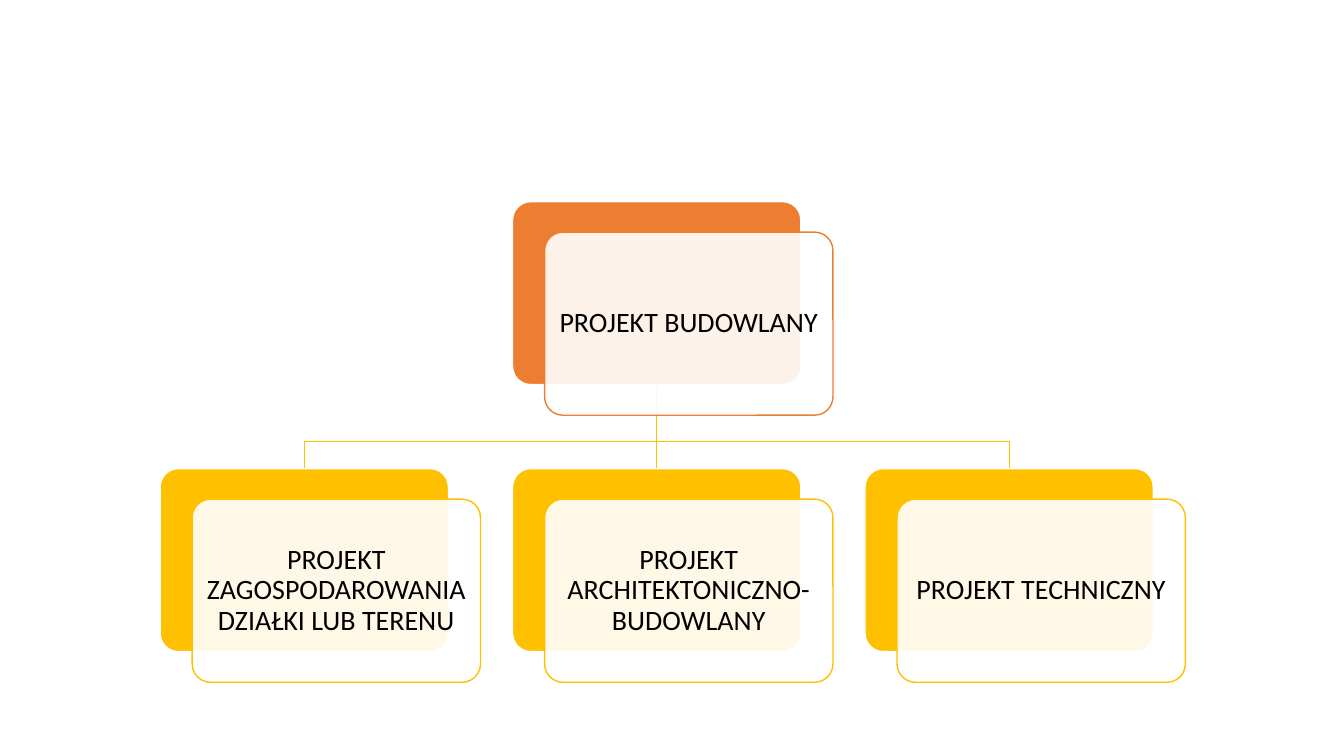
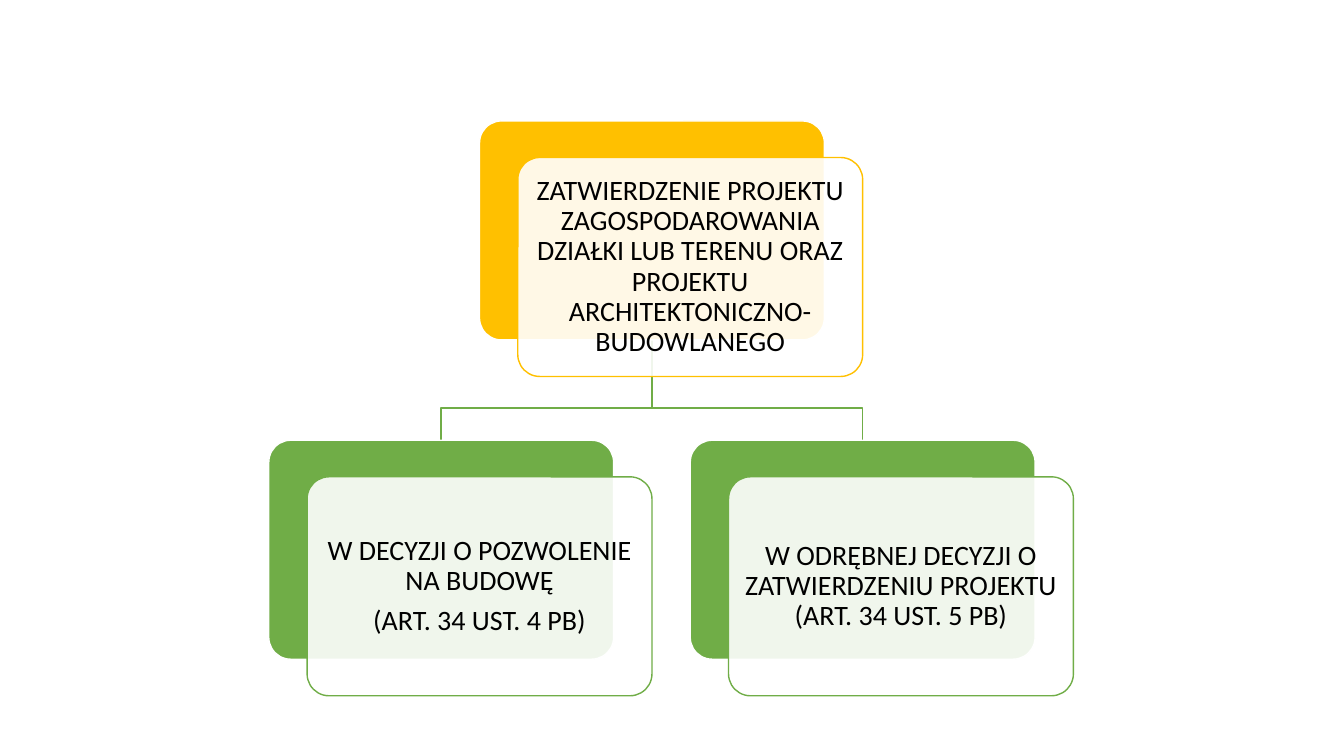
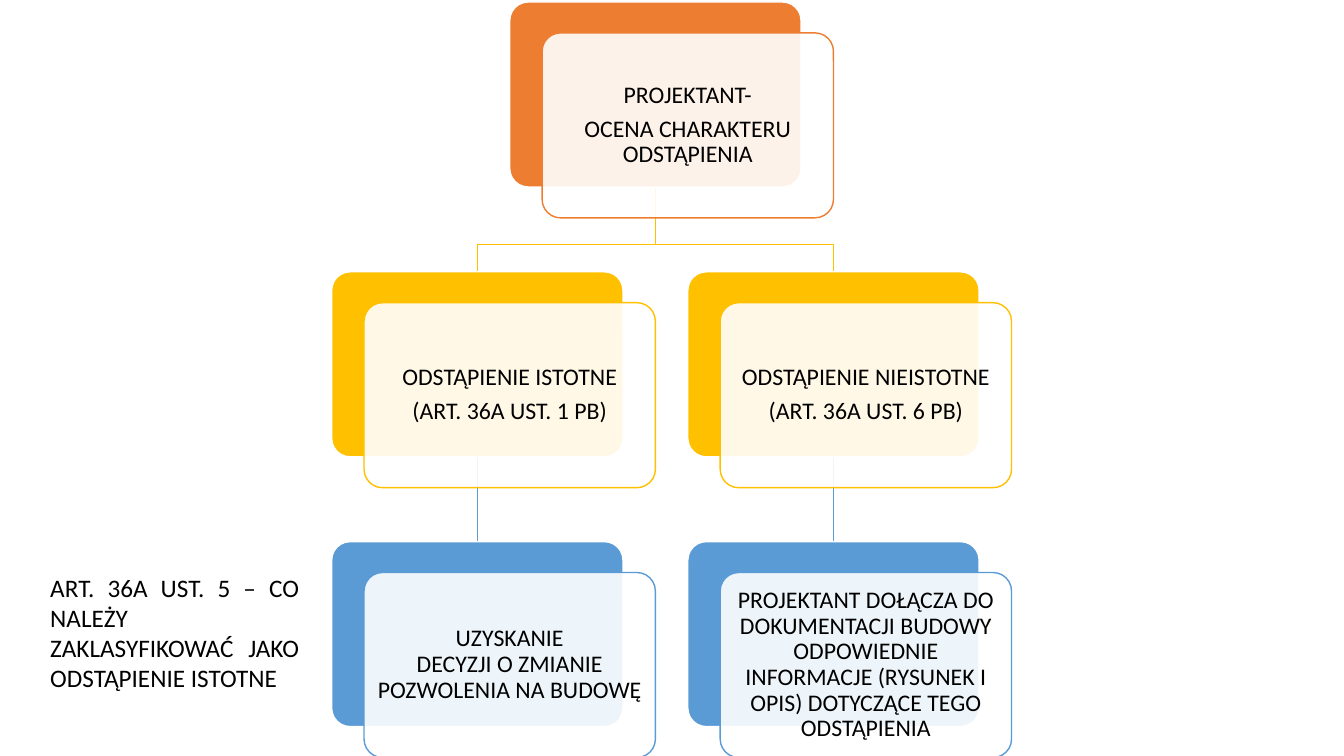
from dataclasses import dataclass

from lxml import etree
from pptx import Presentation
from pptx import util as u
from pptx.dml import color
from pptx.enum import shapes, text
from pptx.oxml import ns


@dataclass(frozen=True)
class Theme:
    orange: str = "ED7D31"
    gold: str = "FFC000"
    green: str = "70AD47"
    blue: str = "5B9BD5"
    paper: str = "FFFFFF"
    ink: str = "000000"
    font: str = "Calibri"
    large: int = 20
    note: int = 18
    small: int = 17
    line: int = 1
    radius: float = 0.1
    veil: int = 90
    spacing: float = 0.9
    after: float = 0.35


THEME = Theme()
WIDTH, HEIGHT = u.Inches(13.333), u.Inches(7.5)


@dataclass(frozen=True)
class Tree:
    left: float
    top: float
    card: float
    size: int

    @property
    def width(self):
        return WIDTH * self.card

    @property
    def height(self):
        return self.width * 0.635

    @property
    def shift(self):
        return self.width / 9, self.width * 0.106

    def place(self, column, row):
        return (WIDTH * self.left + column * self.width * 11 / 9,
                HEIGHT * self.top + row * self.width * 0.926)


@dataclass(frozen=True)
class Card:
    column: float
    row: int
    tint: str
    lines: tuple
    parent: int = -1


def assign(target, values):
    for name, value in values.items():
        setattr(target, name, value)


def rgb(value):
    return color.RGBColor.from_string(value)


def outline(shape, tint):
    shape.line.color.rgb = rgb(tint)
    shape.line.width = u.Pt(THEME.line)


def write(shape, lines, size, frame_format, para_format):
    frame = shape.text_frame
    assign(frame, {"word_wrap": True, **frame_format})
    for index, line in enumerate(lines):
        para = frame.add_paragraph() if index else frame.paragraphs[0]
        para.text = line
        assign(para, para_format)
        assign(para.font, {"name": THEME.font, "size": u.Pt(size)})
        para.font.color.rgb = rgb(THEME.ink)


def add_panel(page, box, fill, line):
    panel = page.shapes.add_shape(
        shapes.MSO_SHAPE.ROUNDED_RECTANGLE, *(int(value) for value in box))
    panel.shadow.inherit = False
    panel.adjustments[0] = THEME.radius
    panel.fill.solid()
    panel.fill.fore_color.rgb = rgb(fill)
    outline(panel, line)
    return panel


def add_card(page, tree, card):
    left, top = tree.place(card.column, card.row)
    across, down = tree.shift
    size = tree.width, tree.height
    add_panel(page, (left, top, *size), card.tint, THEME.paper)
    front = add_panel(page, (left + across, top + down, *size),
                      THEME.paper, card.tint)
    shade = next(front.element.iter(ns.qn("a:srgbClr")))
    etree.SubElement(shade, ns.qn("a:alpha"), val=str(THEME.veil * 1000))
    inset = u.Pt(tree.size * 0.3)
    sides = ("left", "top", "right", "bottom")
    write(front, card.lines, tree.size,
          {"vertical_anchor": text.MSO_ANCHOR.MIDDLE,
           **{f"margin_{side}": inset for side in sides}},
          {"alignment": text.PP_ALIGN.CENTER,
           "line_spacing": THEME.spacing,
           "space_after": u.Pt(tree.size * THEME.after)})


def add_branch(page, tree, parent, child):
    start_x, start_y, end_x, end_y = (
        int(value) for value in (*tree.place(parent.column, parent.row),
                                 *tree.place(child.column, child.row)))
    start_x, end_x = (int(x + tree.width / 2) for x in (start_x, end_x))
    start_y = int(start_y + tree.height)
    if parent.column == child.column:
        branch = page.shapes.add_connector(
            shapes.MSO_CONNECTOR.STRAIGHT, start_x, start_y, end_x, end_y)
        outline(branch, child.tint)
        etree.SubElement(branch.element.spPr, ns.qn("a:effectLst"))
        return
    bend = int(start_y + (end_y - start_y) * 0.68)
    builder = page.shapes.build_freeform(start_x, start_y)
    builder.add_line_segments(
        [(start_x, bend), (end_x, bend), (end_x, end_y)], close=False)
    branch = builder.convert_to_shape()
    branch.shadow.inherit = False
    branch.fill.background()
    outline(branch, child.tint)


def add_tree(page, tree, cards):
    for card in cards:
        if card.parent >= 0:
            add_branch(page, tree, cards[card.parent], card)
    for card in cards:
        add_card(page, tree, card)


def add_note(page, box, line):
    left, top, width, height = box
    note = page.shapes.add_textbox(
        int(WIDTH * left), int(HEIGHT * top),
        int(WIDTH * width), int(HEIGHT * height))
    write(note, (line,), THEME.note,
          {"auto_size": text.MSO_AUTO_SIZE.SHAPE_TO_FIT_TEXT},
          {"alignment": text.PP_ALIGN.JUSTIFY})


PROJECT = (
    Card(1, 0, THEME.orange, ("PROJEKT BUDOWLANY",)),
    Card(0, 1, THEME.gold,
         ("PROJEKT ZAGOSPODAROWANIA DZIAŁKI LUB TERENU",), 0),
    Card(1, 1, THEME.gold, ("PROJEKT ARCHITEKTONICZNO-BUDOWLANY",), 0),
    Card(2, 1, THEME.gold, ("PROJEKT TECHNICZNY",), 0),
)

APPROVAL = (
    Card(0.5, 0, THEME.gold,
         ("ZATWIERDZENIE PROJEKTU ZAGOSPODAROWANIA DZIAŁKI LUB TERENU ORAZ "
          "PROJEKTU ARCHITEKTONICZNO-BUDOWLANEGO",)),
    Card(0, 1, THEME.green,
         ("W DECYZJI O POZWOLENIE NA BUDOWĘ", "(ART. 34 UST. 4 PB)"), 0),
    Card(1, 1, THEME.green,
         ("W ODRĘBNEJ DECYZJI O ZATWIERDZENIU PROJEKTU\n"
          "(ART. 34 UST. 5 PB)",), 0),
)

DEPARTURE = (
    Card(0.5, 0, THEME.orange,
         ("PROJEKTANT-", "OCENA CHARAKTERU ODSTĄPIENIA")),
    Card(0, 1, THEME.gold,
         ("ODSTĄPIENIE ISTOTNE", "(ART. 36A UST. 1 PB)"), 0),
    Card(0, 2, THEME.blue,
         ("UZYSKANIE\nDECYZJI O ZMIANIE POZWOLENIA NA BUDOWĘ",), 1),
    Card(1, 1, THEME.gold,
         ("ODSTĄPIENIE NIEISTOTNE", "(ART. 36A UST. 6 PB)"), 0),
    Card(1, 2, THEME.blue,
         ("PROJEKTANT DOŁĄCZA DO DOKUMENTACJI BUDOWY ODPOWIEDNIE INFORMACJE "
          "(RYSUNEK I OPIS) DOTYCZĄCE TEGO ODSTĄPIENIA",), 3),
)

CHARTS = (
    (Tree(2.86 / 24, 2 / 7.5, 2.86 / 13.33, THEME.large), PROJECT),
    (Tree(0.2, 0.16, 3.42 / 13.33, THEME.large), APPROVAL),
    (Tree(3.29 / 13.33, 0.02 / 7.5, 2.89 / 13.33, THEME.small), DEPARTURE),
)


def main():
    deck = Presentation()
    assign(deck, {"slide_width": WIDTH, "slide_height": HEIGHT})
    for tree, cards in CHARTS:
        page = deck.slides.add_slide(deck.slide_layouts[6])
        add_tree(page, tree, cards)
    add_note(page, (0.03, 0.75, 0.2, 0.17),
             "ART. 36A UST. 5 – CO NALEŻY ZAKLASYFIKOWAĆ JAKO "
             "ODSTĄPIENIE ISTOTNE")
    deck.save("out.pptx")


if __name__ == "__main__":
    main()
